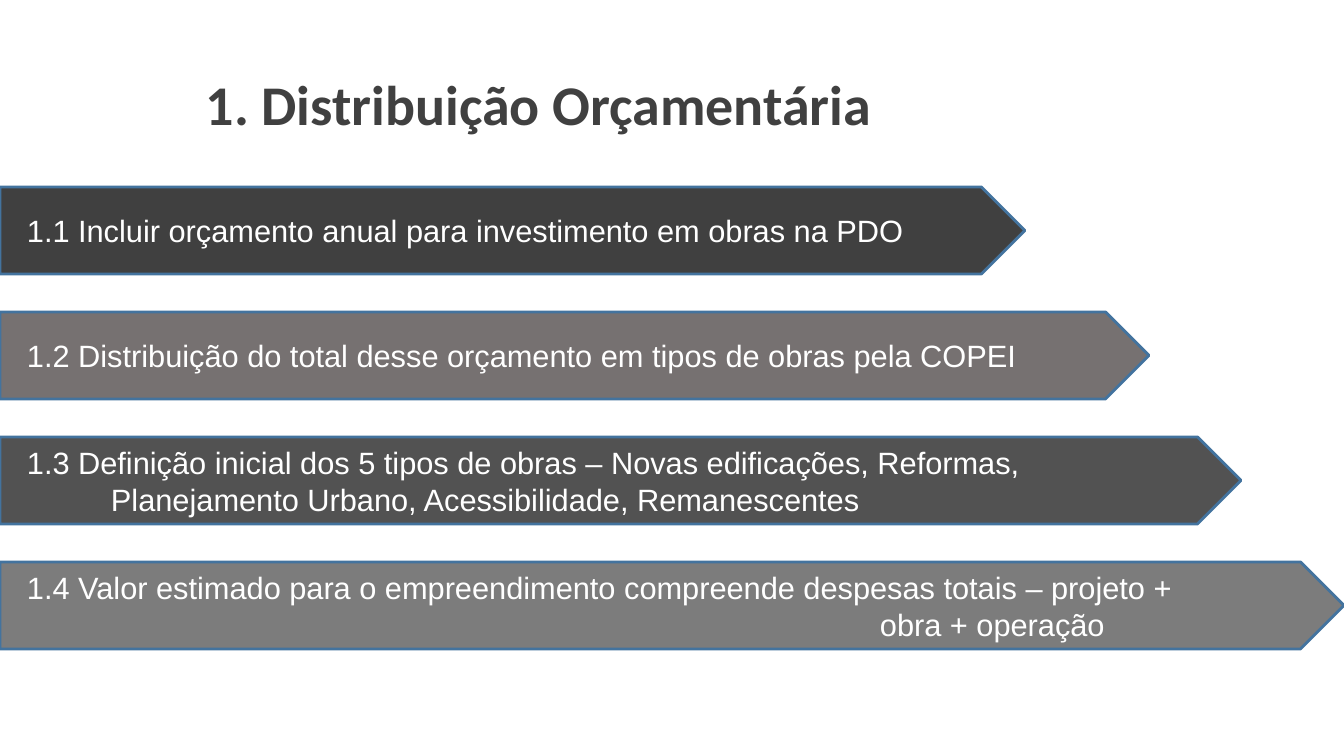
from dataclasses import dataclass

from pptx import Presentation
from pptx.dml.color import RGBColor
from pptx.enum.shapes import MSO_SHAPE
from pptx.enum.text import MSO_ANCHOR, MSO_AUTO_SIZE, PP_ALIGN
from pptx.util import Pt

PLATE = MSO_SHAPE.PENTAGON
MIDDLE = MSO_ANCHOR.MIDDLE
FIXED = MSO_AUTO_SIZE.NONE
LEFT, CENTER = PP_ALIGN.LEFT, PP_ALIGN.CENTER
TITLE_ONLY = 5
WIDE, HIGH = 1344, 756
SCALE = 12192000 / WIDE


def px(count):
    return round(count * SCALE)


@dataclass(frozen=True)
class Theme:
    ink: str = "404040"
    white: str = "FFFFFF"
    edge: str = "43739E"
    head_font: str = "Calibri"
    body_font: str = "Arial"
    head_size: int = 40
    body_size: int = 22
    edge_size: int = 2
    fills: tuple = ("404040", "767171", "525252", "7C7C7C")


class Deck:
    def __init__(self, theme):
        self.theme = theme
        self.file = Presentation()
        self.file.slide_width = px(WIDE)
        self.file.slide_height = px(HIGH)
        layout = self.file.slide_layouts[TITLE_ONLY]
        self.slide = self.file.slides.add_slide(layout)

    def style(self, part, font, size, color, align, bold=False):
        part.alignment = align
        for run in part.runs:
            run.font.name = font
            run.font.size = Pt(size)
            run.font.bold = bold
            run.font.color.rgb = RGBColor.from_string(color)

    def title(self, text, left, top, width, height):
        box = self.slide.shapes.title
        box.left, box.top = px(left), px(top)
        box.width, box.height = px(width), px(height)
        frame = box.text_frame
        frame.text = text
        frame.auto_size = FIXED
        frame.vertical_anchor = MIDDLE
        look = self.theme
        self.style(frame.paragraphs[0], look.head_font, look.head_size,
                   look.ink, CENTER, bold=True)

    def arrow(self, top, width, height, fill, lines, indent):
        look = self.theme
        shape = self.slide.shapes.add_shape(
            PLATE, 0, px(top), px(width), px(height))
        shape.shadow.inherit = False
        shape.fill.solid()
        shape.fill.fore_color.rgb = RGBColor.from_string(fill)
        shape.line.color.rgb = RGBColor.from_string(look.edge)
        shape.line.width = Pt(look.edge_size)
        frame = shape.text_frame
        frame.word_wrap = True
        frame.vertical_anchor = MIDDLE
        frame.margin_left = px(27)
        frame.text = "\n".join(lines)
        for part in frame.paragraphs:
            self.style(part, look.body_font, look.body_size,
                       look.white, LEFT)
        # Second lines start further right
        for part in frame.paragraphs[1:]:
            part._p.get_or_add_pPr().set("marL", str(px(indent)))


def main():
    theme = Theme()
    deck = Deck(theme)

    # Heading
    deck.title("1. Distribuição Orçamentária", 52, 60, 973, 86)

    # Arrows: width, indent of the second line, lines
    steps = [
        (1025, 0, ["1.1 Incluir orçamento anual para investimento em obras na PDO"]),
        (1149, 0, ["1.2 Distribuição do total desse orçamento em tipos de obras pela COPEI"]),
        (1241, 84, ["1.3 Definição inicial dos 5 tipos de obras – Novas edificações, Reformas,",
                    "Planejamento Urbano, Acessibilidade, Remanescentes"]),
        (1344, 853, ["1.4 Valor estimado para o empreendimento compreende despesas totais – projeto +",
                     "obra + operação"]),
    ]
    first, pitch, height = 187, 125, 87
    for row, (width, indent, lines) in enumerate(steps):
        deck.arrow(first + row * pitch, width, height,
                   theme.fills[row], lines, indent)

    deck.file.save("out.pptx")


if __name__ == "__main__":
    main()
